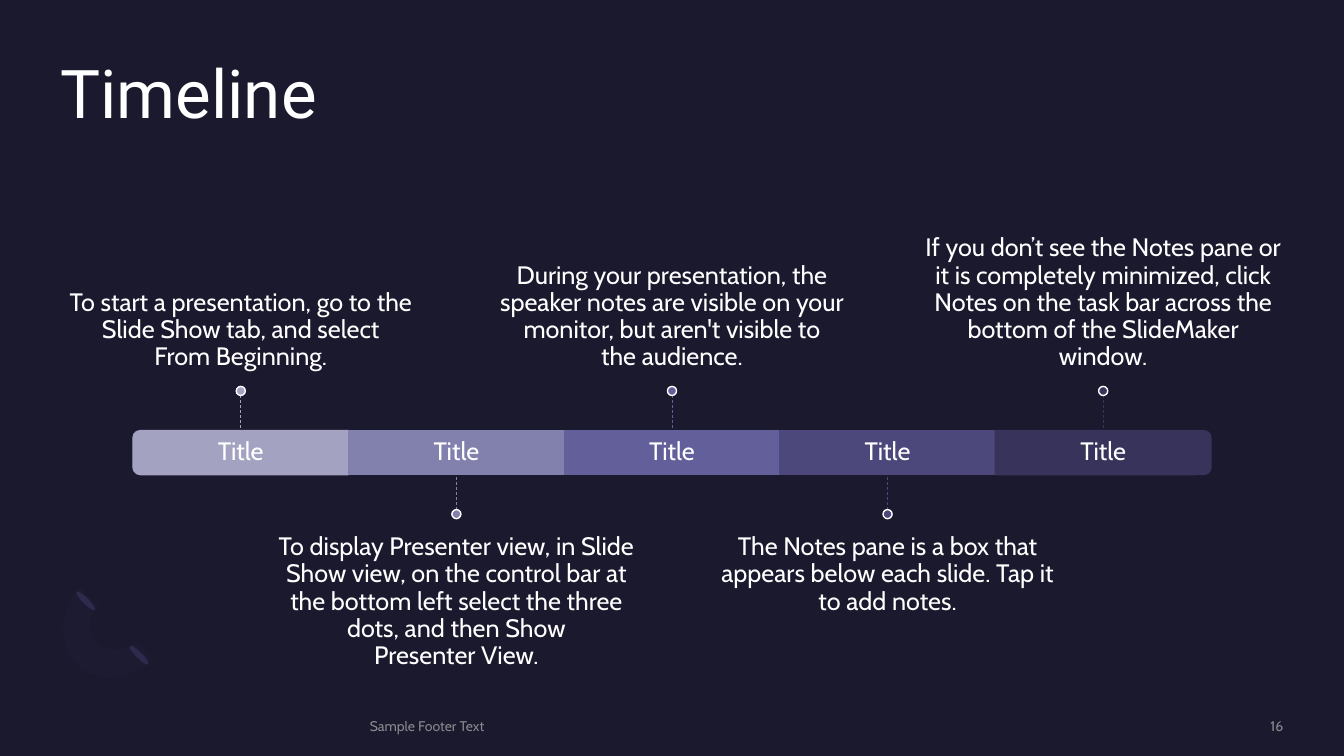
"""Build a five-step timeline slide with alternating callouts."""
from dataclasses import dataclass

from lxml.etree import SubElement
from pptx import Presentation
from pptx.dml.color import RGBColor
from pptx.dml.fill import FillFormat
from pptx.enum.dml import MSO_LINE
from pptx.enum.shapes import MSO_CONNECTOR, MSO_SHAPE
from pptx.enum.text import MSO_ANCHOR, PP_ALIGN
from pptx.oxml.ns import qn
from pptx.shapes.autoshape import Shape
from pptx.shapes.shapetree import SlideShapes
from pptx.util import Pt

Point = tuple[float, float]


@dataclass(frozen=True)
class Theme:
    background: str = "1B192E"
    text: str = "FFFFFF"
    footer: str = "A6A6A6"
    petal: str = "2C284A"
    arc: str = "7771B2"
    heading_font: str = "Roboto"
    body_font: str = "Cabin"
    heading_size: float = 48
    body_size: float = 18
    footer_size: float = 10
    footer_opacity: int = 80
    arc_opacity: int = 3


@dataclass(frozen=True)
class Box:
    left: float
    top: float
    width: float
    height: float

    def lengths(self) -> tuple[Pt, Pt, Pt, Pt]:
        return Pt(self.left), Pt(self.top), Pt(self.width), Pt(self.height)


@dataclass(frozen=True)
class TextStyle:
    font: str
    size: float
    color: str
    align: PP_ALIGN = PP_ALIGN.LEFT
    anchor: MSO_ANCHOR = MSO_ANCHOR.TOP
    insets: tuple[float, float, float, float] = (0, 0, 0, 0)
    line_spacing: float = 0.9
    opacity: int = 100


@dataclass(frozen=True)
class Step:
    color: str
    callout: tuple[str, ...]
    preset: MSO_SHAPE = MSO_SHAPE.RECTANGLE
    rotation: int = 0


THEME = Theme()
SLIDE_WIDTH, SLIDE_HEIGHT = 960, 540
STEP_WIDTH, BAR_TOP, BAR_HEIGHT = 154, 307.5, 31.5
BAR_BOTTOM = BAR_TOP + BAR_HEIGHT
STEM, DOT = 25, 6.5
CALLOUT_WIDTH, CALLOUT_HEIGHT = 257, 109.5
INSET = 10.8

STEPS = (
    Step("A3A3C1", ("To start a presentation, go to the Slide Show tab, and select",
                    "From Beginning."), MSO_SHAPE.ROUND_2_SAME_RECTANGLE, 270),
    Step("8281AE", ("To display Presenter view, in Slide Show view, on the control bar "
                    "at the bottom left select the three dots, and then Show",
                    "Presenter View.")),
    Step("625F9A", ("During your presentation, the speaker notes are visible on your "
                    "monitor, but aren't visible to", "the audience.")),
    Step("4C487B", ("The Notes pane is a box that appears below each slide. "
                    "Tap it to add notes.",)),
    Step("37335B", ("If you don’t see the Notes pane or it is completely minimized, click "
                    "Notes on the task bar across the bottom of the SlideMaker window.",),
         MSO_SHAPE.ROUND_2_SAME_RECTANGLE, 90),
)

ARC_START: Point = (54.7, 474.5)
ARC_CURVES: tuple[tuple[Point, Point, Point], ...] = (
    ((40.3, 460.1), (41.8, 435.6), (58.3, 419)),
    ((59, 423), (66, 430), (71.3, 432)),
    ((62.6, 439.9), (61.9, 452.9), (69.1, 459.4)),
    ((76.3, 466.6), (88.6, 465.8), (97.2, 457.9)),
    ((101, 462), (105, 466), (109.4, 470.9)),
    ((93.6, 486.7), (68.4, 488.9), ARC_START),
)


def rgb(color: str) -> RGBColor:
    return RGBColor.from_string(color)


def paint(fill: FillFormat, color: str, opacity: int = 100) -> None:
    fill.solid()
    fill.fore_color.rgb = rgb(color)
    if opacity < 100:
        for color_element in fill._xPr.iter(qn("a:srgbClr")):
            SubElement(color_element, qn("a:alpha"), val=str(opacity * 1000))


def add_text(shapes: SlideShapes, box: Box, lines: tuple[str, ...], style: TextStyle) -> Shape:
    textbox = shapes.add_textbox(*box.lengths())
    frame = textbox.text_frame
    frame.word_wrap = True
    frame.vertical_anchor = style.anchor
    (frame.margin_left, frame.margin_top,
     frame.margin_right, frame.margin_bottom) = map(Pt, style.insets)
    paragraph = frame.paragraphs[0]
    paragraph.alignment = style.align
    paragraph.line_spacing = style.line_spacing
    for index, line in enumerate(lines):
        if index:
            paragraph.add_line_break()
        run = paragraph.add_run()
        run.text = line
        run.font.name = style.font
        run.font.size = Pt(style.size)
        paint(run.font.fill, style.color, style.opacity)
    return textbox


def add_filled(shapes: SlideShapes, preset: MSO_SHAPE, box: Box, color: str,
               outline: str | None = None, rotation: int = 0) -> None:
    shape = shapes.add_shape(preset, *box.lengths())
    shape.shadow.inherit = False
    shape.rotation = rotation
    paint(shape.fill, color)
    if outline:
        shape.line.color.rgb = rgb(outline)
        shape.line.width = Pt(1)
    else:
        shape.line.fill.background()


def add_stem(shapes: SlideShapes, center: float, dot_edge: float, label: Shape,
             site: int, color: str) -> None:
    stem = shapes.add_connector(MSO_CONNECTOR.STRAIGHT, Pt(center), Pt(dot_edge),
                                Pt(center), Pt(BAR_TOP))
    stem.end_connect(label, site)
    stem.line.color.rgb = rgb(color)
    stem.line.width = Pt(0.5)
    stem.line.dash_style = MSO_LINE.DASH
    SubElement(stem._element.spPr, qn("a:effectLst"))


def add_step(shapes: SlideShapes, index: int, step: Step) -> None:
    center = SLIDE_WIDTH / 2 + (index - (len(STEPS) - 1) / 2) * STEP_WIDTH
    above = index % 2 == 0
    label_box = Box(center - STEP_WIDTH / 2, BAR_TOP, STEP_WIDTH, BAR_HEIGHT)
    upright_box = Box(center - BAR_HEIGHT / 2, BAR_TOP + (BAR_HEIGHT - STEP_WIDTH) / 2,
                      BAR_HEIGHT, STEP_WIDTH)
    add_filled(shapes, step.preset, upright_box if step.rotation else label_box,
               step.color, step.color, step.rotation)
    label = add_text(shapes, label_box, ("Title",), TextStyle(
        THEME.body_font, THEME.body_size, THEME.text, PP_ALIGN.CENTER,
        MSO_ANCHOR.MIDDLE, (INSET,) * 4))
    dot_edge = BAR_TOP - STEM if above else BAR_BOTTOM + STEM
    dot_top = dot_edge - DOT if above else dot_edge
    callout_top = dot_top - CALLOUT_HEIGHT if above else dot_top + DOT
    add_text(shapes, Box(center - CALLOUT_WIDTH / 2, callout_top, CALLOUT_WIDTH, CALLOUT_HEIGHT),
             step.callout, TextStyle(
                 THEME.body_font, THEME.body_size, THEME.text, PP_ALIGN.CENTER,
                 MSO_ANCHOR.BOTTOM if above else MSO_ANCHOR.TOP,
                 (0, 0, 0, INSET) if above else (0, INSET, 0, 0)))
    add_stem(shapes, center, dot_edge, label, 0 if above else 2, step.color)
    add_filled(shapes, MSO_SHAPE.OVAL, Box(center - DOT / 2, dot_top, DOT, DOT),
               step.color, THEME.text)


def curve_points(start: Point, first: Point, second: Point, end: Point) -> list[Point]:
    def blend(t: float, axis: int) -> float:
        return ((1 - t) ** 3 * start[axis] + 3 * (1 - t) ** 2 * t * first[axis]
                + 3 * (1 - t) * t ** 2 * second[axis] + t ** 3 * end[axis])
    return [(blend(n / 12, 0), blend(n / 12, 1)) for n in range(1, 13)]


def add_ornament(shapes: SlideShapes) -> None:
    for left, top in ((97.2, 458.6), (59, 419.8)):
        add_filled(shapes, MSO_SHAPE.OVAL, Box(left, top, 4.3, 18.7), THEME.petal, rotation=135)
    builder = shapes.build_freeform(*ARC_START, scale=Pt(1))
    start = ARC_START
    for first, second, end in ARC_CURVES:
        builder.add_line_segments(curve_points(start, first, second, end), close=False)
        start = end
    builder.add_line_segments([], close=True)
    arc = builder.convert_to_shape()
    arc.shadow.inherit = False
    paint(arc.fill, THEME.arc, THEME.arc_opacity)
    arc.line.fill.background()


def main() -> None:
    presentation = Presentation()
    presentation.slide_width, presentation.slide_height = Pt(SLIDE_WIDTH), Pt(SLIDE_HEIGHT)
    slide = presentation.slides.add_slide(presentation.slide_layouts[6])
    paint(slide.background.fill, THEME.background)
    add_ornament(slide.shapes)
    add_text(slide.shapes, Box(43.2, 43.2, 873.4, 105), ("Timeline",),
             TextStyle(THEME.heading_font, THEME.heading_size, THEME.text))
    for index, step in enumerate(STEPS):
        add_step(slide.shapes, index, step)
    for left, width, words, align in ((264.2, 502.6, "Sample Footer Text", PP_ALIGN.LEFT),
                                      (783.4, 133.2, "16", PP_ALIGN.RIGHT)):
        add_text(slide.shapes, Box(left, 512.6, width, 12.2), (words,), TextStyle(
            THEME.body_font, THEME.footer_size, THEME.footer, align, MSO_ANCHOR.MIDDLE,
            line_spacing=1.0, opacity=THEME.footer_opacity))
    presentation.save("out.pptx")


if __name__ == "__main__":
    main()
